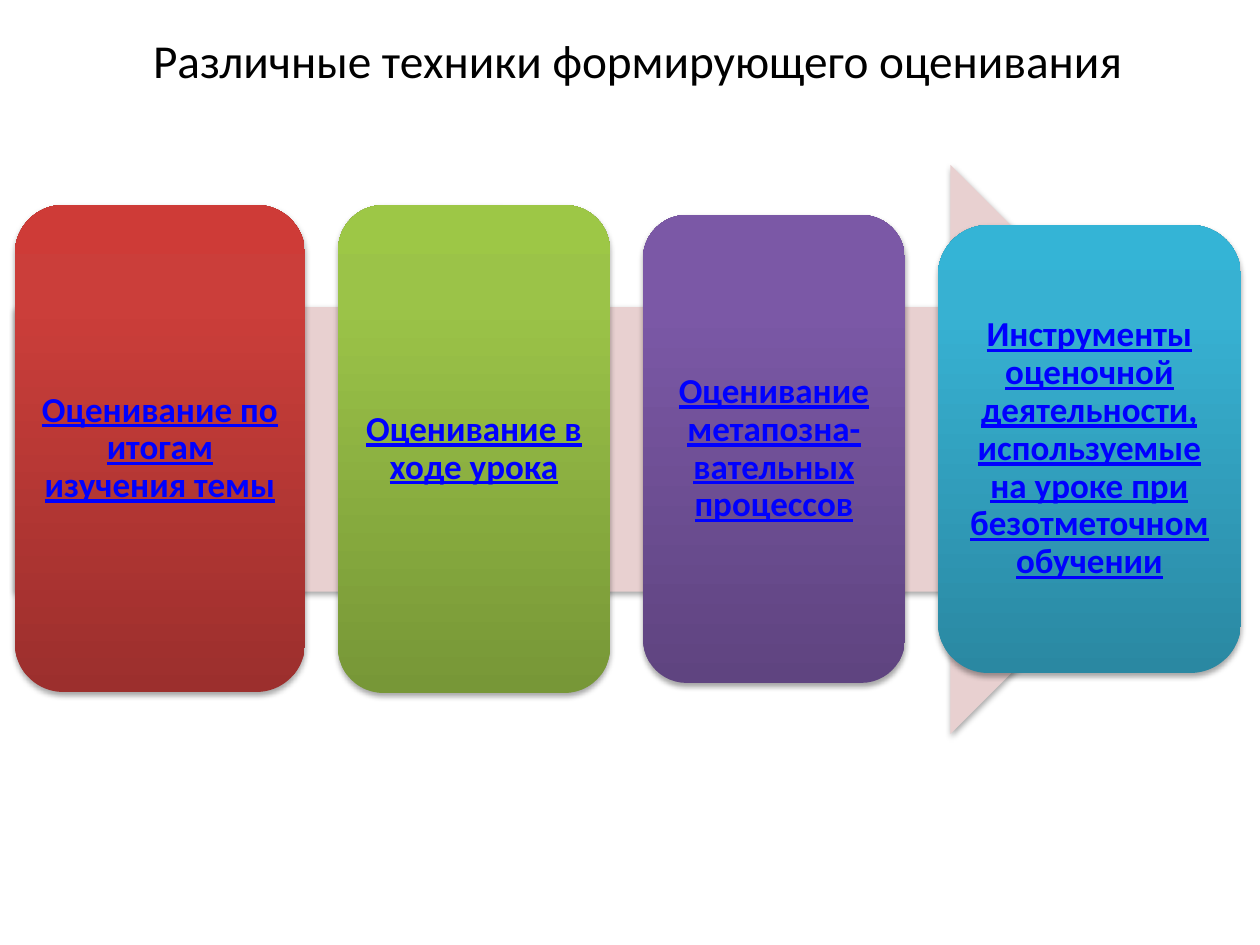
from lxml import etree
from pptx import Presentation
from pptx.dml.color import RGBColor
from pptx.enum.shapes import MSO_SHAPE
from pptx.enum.text import MSO_ANCHOR, PP_ALIGN
from pptx.oxml.ns import qn
from pptx.util import Pt

ARROW, CARD = MSO_SHAPE.RIGHT_ARROW, MSO_SHAPE.ROUNDED_RECTANGLE
MIDDLE, CENTER = MSO_ANCHOR.MIDDLE, PP_ALIGN.CENTER
PX = 914400 // 126
FONT = "Calibri"

TITLE = "Различные техники формирующего оценивания"
# text, box in px, gradient from bottom to top
CARDS = [
    ("Оценивание по итогам изучения темы",
     (15, 205, 290, 487), ("9C2F2D", "CB3E3A", "CE3B37")),
    ("Оценивание в ходе урока",
     (338, 205, 272, 488), ("779737", "9BC348", "9DC746")),
    ("Оценивание метапозна-вательных процессов",
     (643, 215, 262, 468), ("5F4480", "7B58A6", "7C57A8")),
    ("Инструменты оценочной деятельности, используемые на уроке при "
     "безотметочном обучении",
     (938, 225, 303, 448), ("2A88A2", "37B1D2", "34B4D6")),
]
STOPS = (0, 80, 100)


def color(value):
    return RGBColor.from_string(value)


def scale(box):
    return [n * PX for n in box]


def write(shape, text, size=20, ink="0000FF", bold=False, line=False,
          inset=10, pitch=1.0):
    frame = shape.text_frame
    frame.word_wrap = True
    frame.vertical_anchor = MIDDLE
    frame.margin_left = frame.margin_right = inset * PX
    frame.margin_top = frame.margin_bottom = inset * PX
    para = frame.paragraphs[0]
    para.alignment = CENTER
    para.line_spacing = pitch
    run = para.add_run()
    run.text = text
    font = run.font
    font.name, font.size = FONT, Pt(size)
    font.bold, font.underline = bold, line
    font.color.rgb = color(ink)


def add_color(parent, value, alpha=None):
    node = etree.SubElement(parent, qn("a:srgbClr"), val=value)
    if alpha is not None:
        etree.SubElement(node, qn("a:alpha"), val=str(alpha * 1000))


def add_form(slide, kind, box):
    """Add a preset shape with no line and a soft shadow below it."""
    shape = slide.shapes.add_shape(kind, *scale(box))
    shape.line.fill.background()
    shape.shadow.inherit = False
    effects = shape._element.spPr.find(qn("a:effectLst"))
    shadow = etree.SubElement(
        effects, qn("a:outerShdw"), blurRad=str(Pt(3.1)), dist=str(Pt(1.8)),
        dir=str(90 * 60000), rotWithShape="0")
    add_color(shadow, "000000", 35)
    return shape


def shade(shape, tones):
    shape.fill.gradient()
    shape.fill.gradient_angle = 90
    stops = shape._element.spPr.find(qn("a:gradFill")).find(qn("a:gsLst"))
    for old in list(stops):
        stops.remove(old)
    for place, tone in zip(STOPS, tones):
        stop = etree.SubElement(stops, qn("a:gs"), pos=str(place * 1000))
        add_color(stop, tone)


def main():
    deck = Presentation()
    deck.slide_width, deck.slide_height = scale((1260, 945))
    slide = deck.slides.add_slide(deck.slide_layouts[6])

    # Title
    title = slide.shapes.add_textbox(*scale((48, 27, 1179, 65)))
    write(title, TITLE, size=27, ink="000000", inset=6)

    # Arrow behind the cards
    arrow = add_form(slide, ARROW, (15, 165, 1220, 569))
    arrow.fill.solid()
    arrow.fill.fore_color.rgb = color("E8D0D0")

    # Cards
    for text, box, tones in CARDS:
        card = add_form(slide, CARD, box)
        shade(card, tones)
        write(card, text, bold=True, line=True, pitch=0.9)

    deck.save("out.pptx")


if __name__ == "__main__":
    main()
